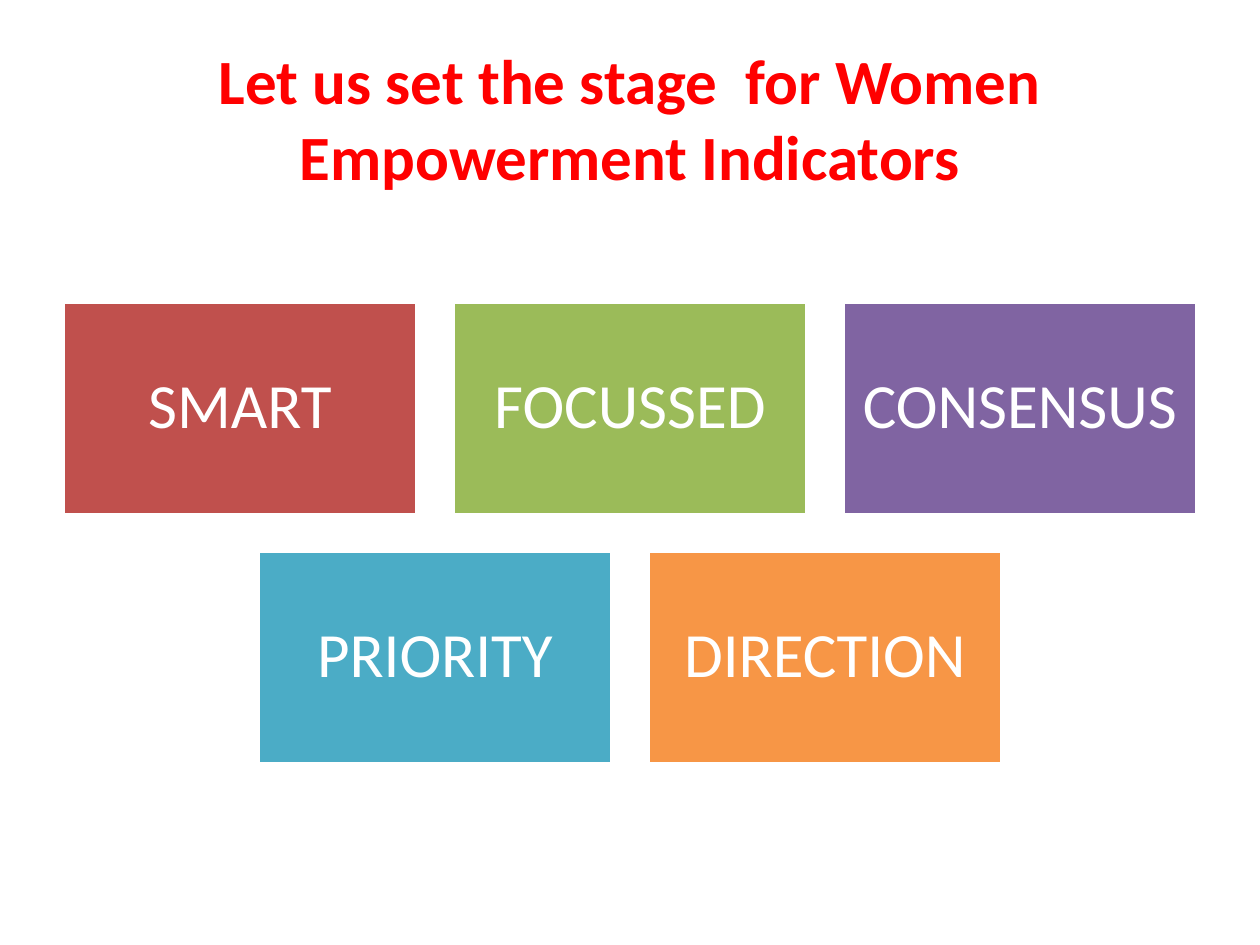
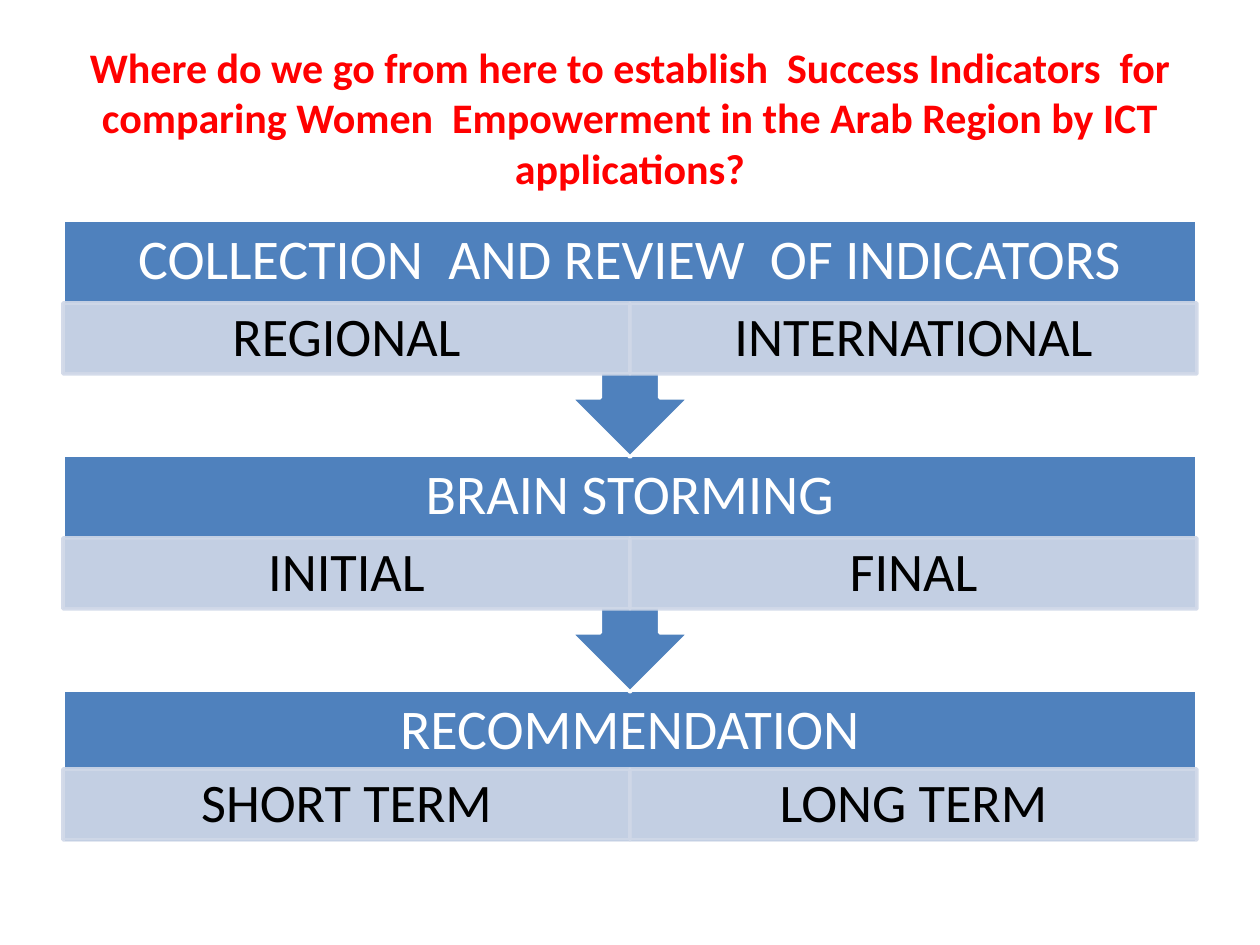
from lxml.etree import SubElement
from pptx import Presentation
from pptx.dml.color import RGBColor
from pptx.enum.shapes import MSO_SHAPE
from pptx.enum.text import MSO_ANCHOR, PP_ALIGN
from pptx.oxml.ns import qn
from pptx.util import Emu, Pt

PX_PER_INCH = 126
FONT = "Calibri"
RED = RGBColor(0xFF, 0x00, 0x00)
WHITE = RGBColor(0xFF, 0xFF, 0xFF)
BLACK = RGBColor(0x00, 0x00, 0x00)
BRICK = RGBColor(0xC0, 0x50, 0x4D)
GREEN = RGBColor(0x9B, 0xBB, 0x59)
PURPLE = RGBColor(0x80, 0x64, 0xA2)
TEAL = RGBColor(0x4B, 0xAC, 0xC6)
ORANGE = RGBColor(0xF7, 0x96, 0x46)
BLUE = RGBColor(0x4F, 0x81, 0xBD)
PALE_BLUE = RGBColor(0xD0, 0xD8, 0xE8)

TITLE_BOX = (63, 38, 1134, 158)
TILES_BOX = (63, 302, 1134, 462)
STEPS_BOX = (63, 220, 1134, 623)

QUALITIES = [
    [("SMART", BRICK), ("FOCUSSED", GREEN), ("CONSENSUS", PURPLE)],
    [("PRIORITY", TEAL), ("DIRECTION", ORANGE)],
]
STEPS = [
    ("COLLECTION  AND REVIEW  OF INDICATORS", ("REGIONAL", "INTERNATIONAL")),
    ("BRAIN STORMING", ("INITIAL", "FINAL")),
    ("RECOMMENDATION", ("SHORT TERM", "LONG TERM")),
]


def px(*lengths):
    """Turn pixel lengths into EMU."""
    return [Emu(round(length * 914400 / PX_PER_INCH)) for length in lengths]


def write(holder, text, size, color, bold=False, spacing=0.9):
    """Centre one paragraph of text in a shape or text box."""
    frame = holder.text_frame
    frame.word_wrap = True
    frame.vertical_anchor = MSO_ANCHOR.MIDDLE
    frame.margin_left, frame.margin_right, frame.margin_top, frame.margin_bottom = px(12, 12, 5, 5)
    paragraph = frame.paragraphs[0]
    paragraph.text = text
    paragraph.alignment = PP_ALIGN.CENTER
    paragraph.line_spacing = spacing
    paragraph.font.name = FONT
    paragraph.font.size = Pt(size)
    paragraph.font.bold = bold
    paragraph.font.color.rgb = color


def add_block(slide, box, fill, line=WHITE, preset=MSO_SHAPE.RECTANGLE):
    """Add a filled, outlined shape without shadow."""
    block = slide.shapes.add_shape(preset, *px(*box))
    block.shadow.inherit = False
    block.fill.solid()
    block.fill.fore_color.rgb = fill
    block.line.color.rgb = line
    block.line.width = Pt(2)
    return block


def add_text(slide, box, text, size, color, **style):
    """Add a text box with one centred paragraph."""
    write(slide.shapes.add_textbox(*px(*box)), text, size, color, **style)


def add_titled_slide(deck, title, size):
    """Add a blank slide with the shared red title."""
    slide = deck.slides.add_slide(deck.slide_layouts[6])
    add_text(slide, TITLE_BOX, title, size, RED, bold=True, spacing=1.0)
    return slide


def add_quality_tiles(slide, box, rows, gap=36):
    """Lay out equal tiles in centred rows."""
    left, top, width, height = box
    columns = max(len(row) for row in rows)
    tile_width = (width - gap * (columns - 1)) // columns
    tile_height = (height - gap * (len(rows) - 1)) // len(rows)
    for index, row in enumerate(rows):
        row_width = len(row) * (tile_width + gap) - gap
        x = left + (width - row_width) // 2
        y = top + index * (tile_height + gap)
        for quality, color in row:
            tile = add_block(slide, (x, y, tile_width, tile_height), color)
            write(tile, quality, 36, WHITE)
            x += tile_width + gap


def make_translucent(block, percent):
    """Set the opacity of a block's fill and line."""
    for color in block._element.spPr.iter(qn("a:srgbClr")):
        SubElement(color, qn("a:alpha"), val=str(percent * 1000))


def add_step(slide, box, heading, options, is_last):
    """Add one step: a heading band over two options, with an arrow unless last."""
    left, top, width, height = box
    heading_height = 79 if is_last else 83
    if is_last:
        add_block(slide, box, BLUE)
    else:
        callout = add_block(slide, box, BLUE, preset=MSO_SHAPE.UP_ARROW_CALLOUT)
        callout.rotation = 180
    add_text(slide, (left, top, width, 83), heading, 32, WHITE)
    option_width = width // len(options)
    for index, option in enumerate(options):
        option_box = (left + index * option_width, top + heading_height, option_width, 71)
        cell = add_block(slide, option_box, PALE_BLUE, PALE_BLUE)
        make_translucent(cell, 90)
        write(cell, option, 31, BLACK)


def add_steps(slide, box, steps, pitch=235, overlap=2):
    """Stack the steps from the last up, so each arrow tip lies on the next."""
    left, top, width, height = box
    last = len(steps) - 1
    for index, (heading, options) in reversed(list(enumerate(steps))):
        is_last = index == last
        step_height = height - last * pitch if is_last else pitch + overlap
        step_box = (left, top + index * pitch, width, step_height)
        add_step(slide, step_box, heading, options, is_last)


def main():
    """Build and save the deck."""
    deck = Presentation()
    deck.slide_width, deck.slide_height = px(1260, 945)
    stage = add_titled_slide(deck, "Let us set the stage  for Women Empowerment Indicators", 36)
    add_quality_tiles(stage, TILES_BOX, QUALITIES)
    roadmap = add_titled_slide(
        deck,
        "Where do we go from here to establish  Success Indicators  for comparing "
        "Women  Empowerment in the Arab Region by ICT applications?",
        24,
    )
    add_steps(roadmap, STEPS_BOX, STEPS)
    deck.save("out.pptx")


if __name__ == "__main__":
    main()
